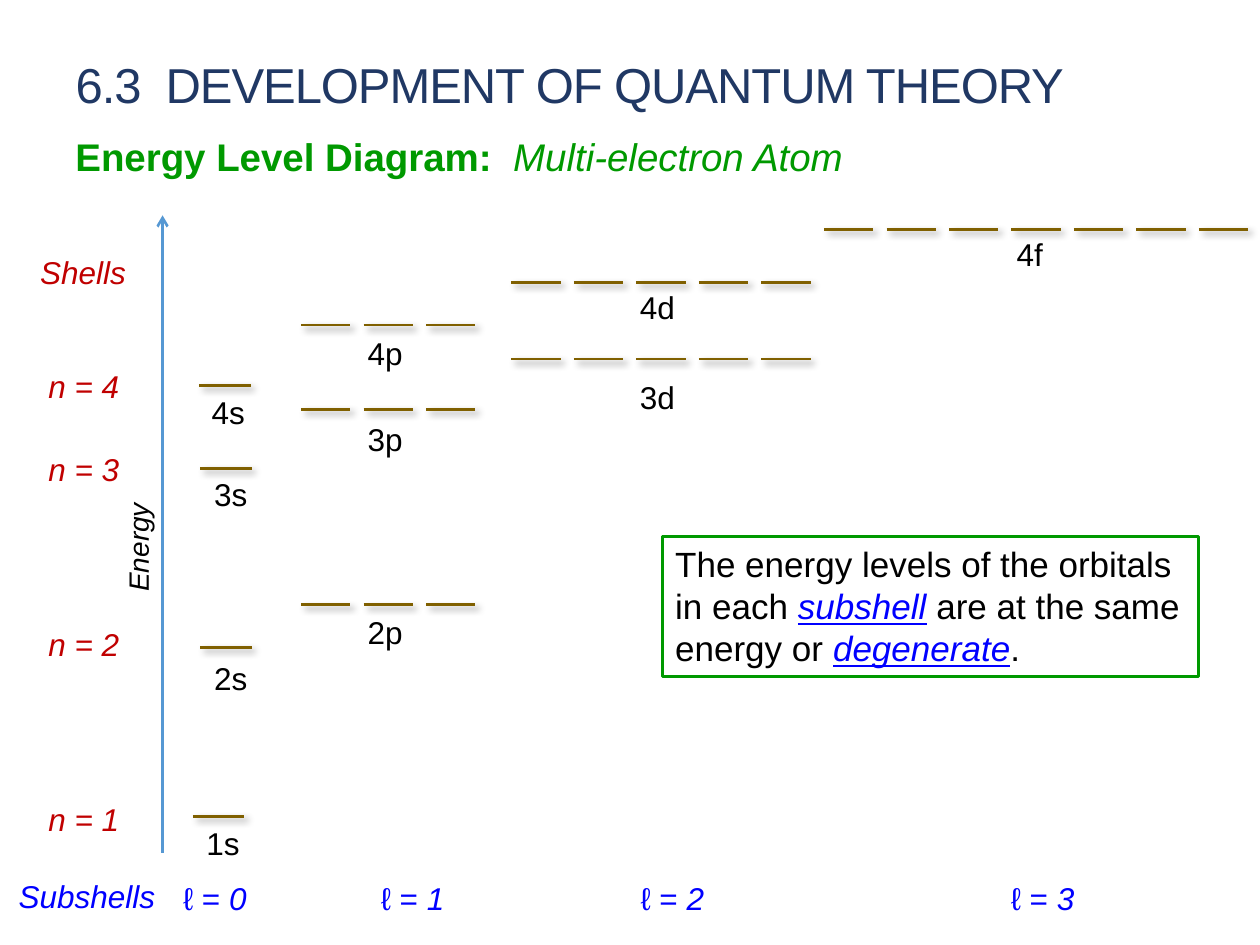
import pptx
import pptx.dml.color
import pptx.enum.shapes
import pptx.enum.text
import pptx.oxml
import pptx.oxml.ns
import pptx.util

Pt = pptx.util.Pt
ALIGN = pptx.enum.text.PP_ALIGN
ANCHOR = pptx.enum.text.MSO_ANCHOR
AUTO_SIZE = pptx.enum.text.MSO_AUTO_SIZE
STRAIGHT = pptx.enum.shapes.MSO_CONNECTOR.STRAIGHT
BLACK, RED, BLUE, GREEN = "000000", "C00000", "0000FF", "009900"
NAMESPACE = pptx.oxml.ns.nsdecls("a")


def paint(color_format, color):
    color_format.rgb = pptx.dml.color.RGBColor.from_string(color)


def write(shape, runs, align=ALIGN.LEFT, anchor=ANCHOR.TOP, wrap=True):
    """Fill a shape with runs, each a text, a colour and a dict of font values."""
    frame_format = {"word_wrap": wrap, "auto_size": AUTO_SIZE.NONE, "vertical_anchor": anchor}
    for name, value in frame_format.items():
        setattr(shape.text_frame, name, value)
    paragraph = shape.text_frame.paragraphs[0]
    paragraph.alignment = align
    for text, color, values in runs:
        run = paragraph.add_run()
        run.text = text
        paint(run.font.color, color)
        for name, value in ({"name": "Arial", "size": Pt(18)} | values).items():
            setattr(run.font, name, value)


presentation = pptx.Presentation()
presentation.slide_width, presentation.slide_height = Pt(720), Pt(540)
slide = presentation.slides.add_slide(presentation.slide_layouts[5])
shapes = slide.shapes

# Title and subtitle
title = shapes.title
title_place = {"left": 36, "top": 27.4, "width": 672, "height": 41}
for name, value in title_place.items():
    setattr(title, name, Pt(value))
write(title, [("6.3  DEVELOPMENT OF QUANTUM THEORY", "203864", {"size": Pt(28)})],
      anchor=ANCHOR.BOTTOM)
title.text_frame.paragraphs[0].runs[0].font._element.set("spc", "-60")

subtitle = shapes.add_textbox(Pt(36), Pt(72.7), Pt(672), Pt(65.5))
write(subtitle, [("Energy Level Diagram:  ", GREEN, {"size": Pt(22), "bold": True}),
                 ("Multi-electron Atom", GREEN, {"size": Pt(22), "italic": True})])

# Energy axis
axis = shapes.add_connector(STRAIGHT, Pt(92.9), Pt(487.4), Pt(92.9), Pt(123.1))
paint(axis.line.color, "5698D3")
axis.line.width = Pt(1.5)
axis_properties = axis.element.spPr
axis_properties.find(pptx.oxml.ns.qn("a:ln")).append(
    pptx.oxml.parse_xml(f'<a:tailEnd {NAMESPACE} type="arrow"/>'))
axis_properties.append(pptx.oxml.parse_xml(f"<a:effectLst {NAMESPACE}/>"))

axis_label = shapes.add_textbox(Pt(46.1), Pt(299.5), Pt(65.5), Pt(26.6))
axis_label.rotation = 270
write(axis_label, [("Energy", BLACK, {"size": Pt(16), "italic": True})],
      ALIGN.CENTER, wrap=False)

# Subshells: name, orbital left and top, label left and top
orbital_counts = {"s": 1, "p": 3, "d": 5, "f": 7}
orbital_pitch = 35.7
orbital_shadow = (
    f'<a:effectLst {NAMESPACE}><a:outerShdw blurRad="50800" dist="38100" dir="2700000" '
    'algn="tl" rotWithShape="0"><a:srgbClr val="000000"><a:alpha val="40000"/>'
    "</a:srgbClr></a:outerShdw></a:effectLst>")
subshells = [
    ("1s", 110.2, 466.6, 110.9, 467.3),
    ("2s", 114.5, 370.1, 115.2, 373),
    ("3s", 114.5, 267.8, 115.2, 267.8),
    ("4s", 113.8, 220.3, 113.8, 221),
    ("2p", 172.1, 345.6, 203, 347),
    ("3p", 172.1, 234, 203, 236.2),
    ("4p", 172.1, 185.8, 203, 187.2),
    ("3d", 292.3, 205.2, 358.6, 212.4),
    ("4d", 292.3, 161.3, 358.6, 161.3),
    ("4f", 470.9, 131, 573.8, 131),
]
for name, left, top, label_left, label_top in subshells:
    count = orbital_counts[name[-1]]
    width = 29.4 if count == 1 else 28.1
    for index in range(count):
        start = left + index * orbital_pitch
        orbital = shapes.add_connector(STRAIGHT, Pt(start), Pt(top), Pt(start + width), Pt(top))
        paint(orbital.line.color, "806000")
        orbital.line.width = Pt(1.5)
        orbital.element.spPr.append(pptx.oxml.parse_xml(orbital_shadow))
    label = shapes.add_textbox(Pt(label_left), Pt(label_top), Pt(37.4), Pt(37.4))
    write(label, [(name, BLACK, {})])

# Shell labels and the two headings
side_labels = [
    ("Shells", RED, 15.8, 141.1, 64.1, ALIGN.LEFT),
    ("Subshells", BLUE, 3.6, 497.5, 93.6, ALIGN.LEFT),
]
for number, top in enumerate((453.6, 353.5, 253.4, 205.9), start=1):
    side_labels.append((f"n = {number}", RED, 20.2, top, 55.4, ALIGN.CENTER))
for text, color, left, top, width, align in side_labels:
    label = shapes.add_textbox(Pt(left), Pt(top), Pt(width), Pt(29))
    write(label, [(text, color, {"italic": True})], align, wrap=False)

# Angular momentum labels
for number, left in enumerate((97.2, 210.2, 358.6, 570.2)):
    label = shapes.add_textbox(Pt(left), Pt(499), Pt(56.2), Pt(29))
    write(label, [("ℓ = ", BLUE, {}), (f"{number} ", BLUE, {"italic": True})],
          ALIGN.CENTER, wrap=False)

# Note on degenerate orbitals
note = shapes.add_shape(pptx.enum.shapes.MSO_SHAPE.RECTANGLE,
                        Pt(378.7), Pt(306.7), Pt(306), Pt(79.9))
note.shadow.inherit = False
note.fill.background()
paint(note.line.color, GREEN)
note.line.width = Pt(1.5)
plain = {"size": Pt(20)}
term = plain | {"italic": True, "underline": True}
write(note, [("The energy levels of the orbitals in each ", BLACK, plain),
             ("subshell", BLUE, term),
             (" are at the same energy or ", BLACK, plain),
             ("degenerate", BLUE, term),
             (".", BLACK, plain)])

presentation.save("out.pptx")
